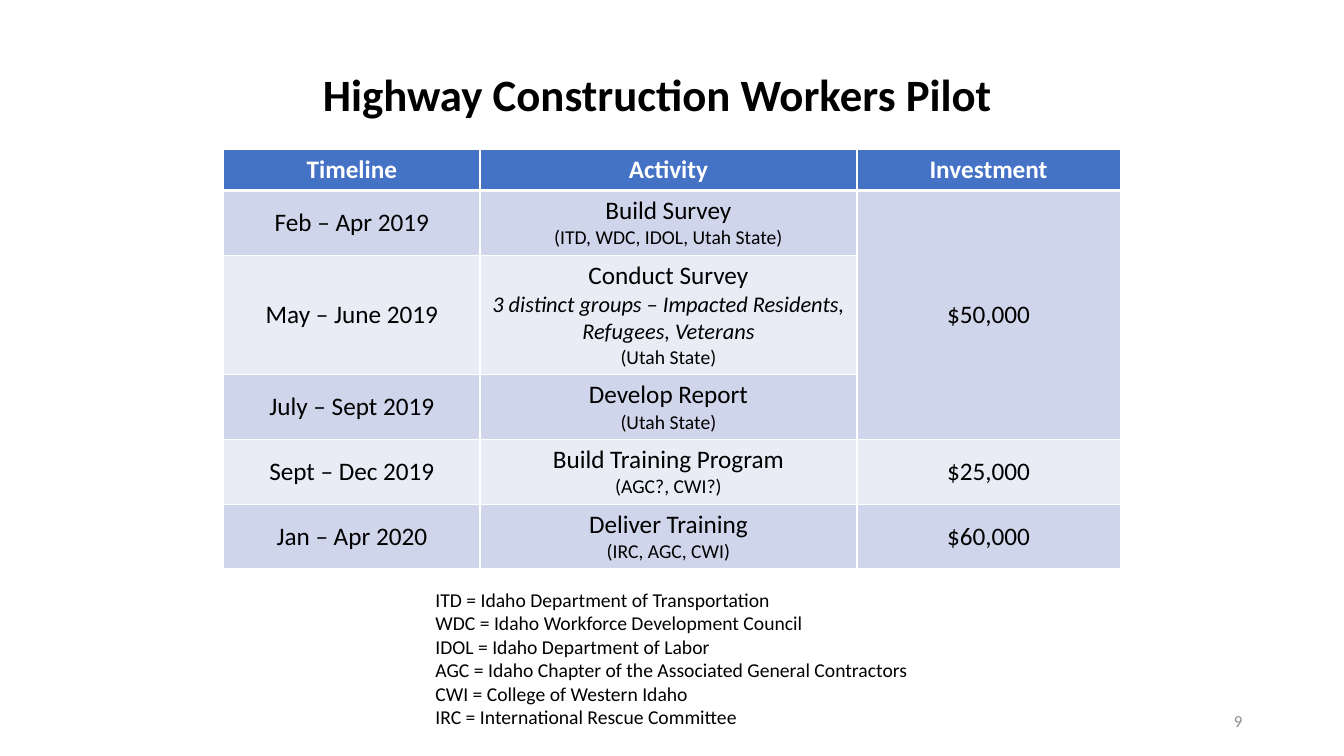
"""Build the Highway Construction Workers Pilot timeline slide."""
from lxml.etree import SubElement
from pptx import Presentation
from pptx.dml.color import RGBColor
from pptx.enum.text import MSO_ANCHOR, MSO_AUTO_SIZE, PP_ALIGN
from pptx.oxml.ns import qn
from pptx.util import Inches, Pt

TITLE = "Highway Construction Workers Pilot"
HEADINGS = ["Timeline", "Activity", "Investment"]
PHASES = [
    ("Feb – Apr 2019", "Build Survey", "", "(ITD, WDC, IDOL, Utah State)", "$50,000"),
    ("May – June 2019", "Conduct Survey",
     "3 distinct groups – Impacted Residents, Refugees, Veterans", "(Utah State)", ""),
    ("July – Sept 2019", "Develop Report", "", "(Utah State)", ""),
    ("Sept – Dec 2019", "Build Training Program", "", "(AGC?, CWI?)", "$25,000"),
    ("Jan – Apr 2020", "Deliver Training", "", "(IRC, AGC, CWI)", "$60,000"),
]
SURVEY_PHASES = 3
ABBREVIATIONS = [
    "ITD = Idaho Department of Transportation",
    "WDC = Idaho Workforce Development Council",
    "IDOL = Idaho Department of Labor",
    "AGC = Idaho Chapter of the Associated General Contractors",
    "CWI = College of Western Idaho",
    "IRC = International Rescue Committee",
]
PAGE_NUMBER = "9"

COLUMN_WIDTHS = [2.54, 3.74, 2.61]
HEADING_HEIGHT, PHASE_HEIGHT, DETAILED_HEIGHT = 0.41, 0.64, 1.18
BLACK, WHITE, GREY = "000000", "FFFFFF", "8C8C8C"
HEADING_FILL, BAND_FILLS = "4472C4", ["CFD5EA", "E9EBF5"]


def color(value):
    return RGBColor.from_string(value)


def write(frame, text, size=18, ink=BLACK, bold=False, italic=False,
          align=PP_ALIGN.CENTER):
    paragraph = frame.paragraphs[0]
    if paragraph.runs:
        paragraph = frame.add_paragraph()
    paragraph.alignment = align
    run = paragraph.add_run()
    run.text = text
    font = run.font
    font.name, font.size, font.bold, font.italic = "Calibri", Pt(size), bold, italic
    font.color.rgb = color(ink)


def style_cell(cell, fill, bottom=1):
    cell.vertical_anchor = MSO_ANCHOR.MIDDLE
    properties = cell._tc.get_or_add_tcPr()
    for side, width in (("L", 1), ("R", 1), ("T", 1), ("B", bottom)):
        border = SubElement(properties, qn(f"a:ln{side}"), w=str(Pt(width)))
        SubElement(SubElement(border, qn("a:solidFill")), qn("a:srgbClr"), val=WHITE)
    cell.fill.solid()
    cell.fill.fore_color.rgb = color(fill)


def place_text(slide, left, top, width, height, anchor=MSO_ANCHOR.TOP):
    frame = slide.shapes.add_textbox(
        Inches(left), Inches(top), Inches(width), Inches(height)).text_frame
    frame.word_wrap = True
    frame.vertical_anchor = anchor
    return frame


def add_title(slide):
    title = slide.shapes.title
    title.left, title.top = Inches(2.94), Inches(0.61)
    title.width, title.height = Inches(7.16), Inches(0.64)
    title.text_frame.auto_size = MSO_AUTO_SIZE.NONE
    title.text_frame.vertical_anchor = MSO_ANCHOR.TOP
    write(title.text_frame, TITLE, size=32, bold=True)


def add_schedule(slide):
    heights = [HEADING_HEIGHT] + [
        DETAILED_HEIGHT if detail else PHASE_HEIGHT for _, _, detail, _, _ in PHASES]
    schedule = slide.shapes.add_table(
        len(heights), len(HEADINGS), Inches(2.22), Inches(1.48),
        Inches(sum(COLUMN_WIDTHS)), Inches(sum(heights))).table
    for column, width in zip(schedule.columns, COLUMN_WIDTHS):
        column.width = Inches(width)
    for row, height in zip(schedule.rows, heights):
        row.height = Inches(height)

    for cell, heading in zip(schedule.rows[0].cells, HEADINGS):
        style_cell(cell, HEADING_FILL, bottom=3)
        write(cell.text_frame, heading, ink=WHITE, bold=True)

    for index, (period, activity, detail, partners, investment) in enumerate(PHASES):
        cells = schedule.rows[index + 1].cells
        for cell in cells:
            style_cell(cell, BAND_FILLS[index % 2])
        period_cell, activity_cell, investment_cell = cells
        write(period_cell.text_frame, period)
        write(activity_cell.text_frame, activity)
        if detail:
            write(activity_cell.text_frame, detail, size=16, italic=True)
        write(activity_cell.text_frame, partners, size=14)
        if investment:
            write(investment_cell.text_frame, investment)
    schedule.cell(1, 2).merge(schedule.cell(SURVEY_PHASES, 2))


def main():
    deck = Presentation()
    deck.slide_width, deck.slide_height = Inches(13.33), Inches(7.5)
    slide = deck.slides.add_slide(deck.slide_layouts[5])
    add_schedule(slide)
    add_title(slide)
    legend = place_text(slide, 4.22, 5.78, 4.9, 1.51)
    for abbreviation in ABBREVIATIONS:
        write(legend, abbreviation, size=14, align=PP_ALIGN.LEFT)
    footer = place_text(slide, 9.42, 6.95, 3, 0.4, anchor=MSO_ANCHOR.MIDDLE)
    write(footer, PAGE_NUMBER, size=12, ink=GREY, align=PP_ALIGN.RIGHT)
    deck.save("out.pptx")


if __name__ == "__main__":
    main()
